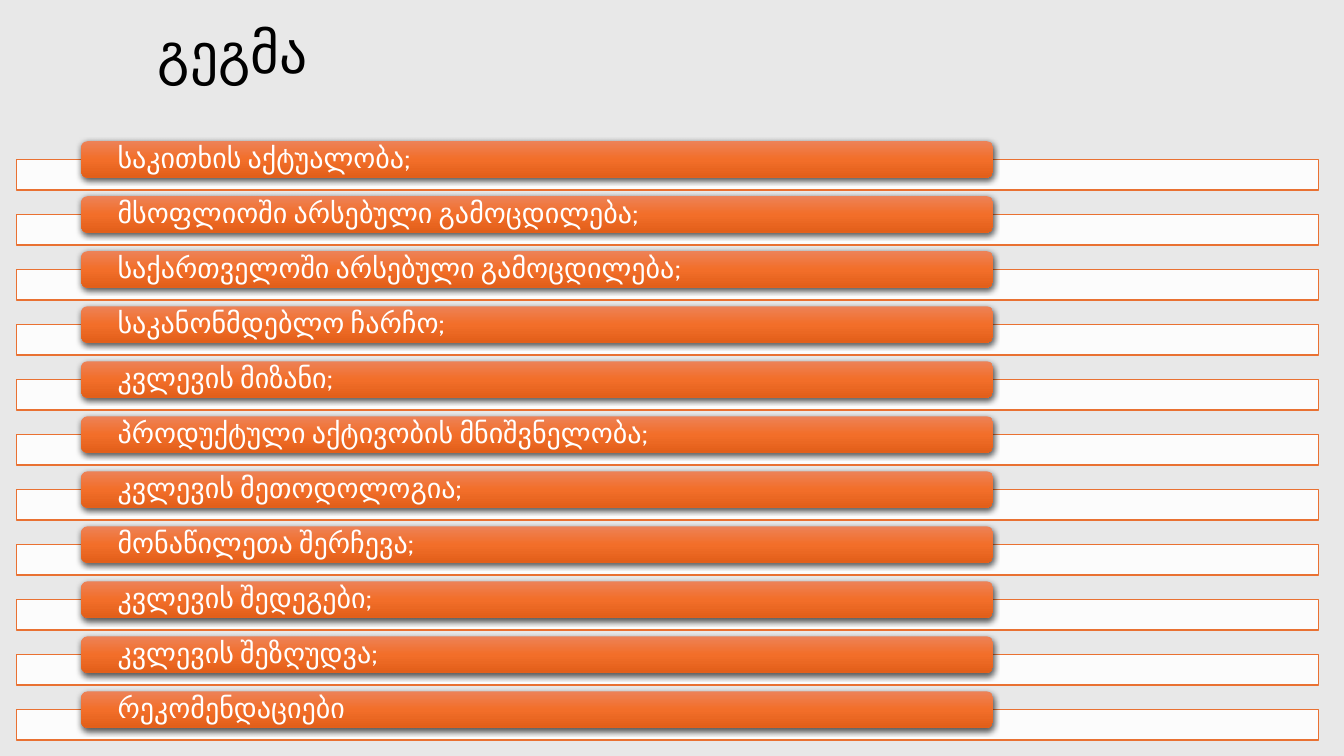
import copy

import lxml.etree
import pptx
import pptx.dml.color
import pptx.enum.shapes
import pptx.enum.text
import pptx.oxml.ns
import pptx.util

Pt = pptx.util.Pt
RGBColor = pptx.dml.color.RGBColor
SHAPES = pptx.enum.shapes.MSO_SHAPE
qn = pptx.oxml.ns.qn

BACKGROUND = RGBColor(0xE8, 0xE8, 0xE8)
BLACK = RGBColor(0, 0, 0)
WHITE = RGBColor(0xFF, 0xFF, 0xFF)
ORANGE = RGBColor(0xE9, 0x71, 0x32)
BAR_STOPS = [
    (0, RGBColor(0xED, 0x82, 0x57)),
    (0.5, RGBColor(0xF2, 0x6E, 0x29)),
    (1, RGBColor(0xE2, 0x5F, 0x1A)),
]
FONT = "Cabin"

TOPICS = [
    "საკითხის აქტუალობა;",
    "მსოფლიოში არსებული გამოცდილება;",
    "საქართველოში არსებული გამოცდილება;",
    "საკანონმდებლო ჩარჩო;",
    "კვლევის მიზანი;",
    "პროდუქტული აქტივობის მნიშვნელობა;",
    "კვლევის მეთოდოლოგია;",
    "მონაწილეთა შერჩევა;",
    "კვლევის შედეგები;",
    "კვლევის შეზღუდვა;",
    "რეკომენდაციები",
]


def write_line(shape, text, size, color, side_inset, edge_inset):
    """Put one left-aligned, vertically centred line into the shape."""
    frame = shape.text_frame
    frame.word_wrap = True
    frame.vertical_anchor = pptx.enum.text.MSO_ANCHOR.MIDDLE
    frame.margin_left = frame.margin_right = Pt(side_inset)
    frame.margin_top = frame.margin_bottom = Pt(edge_inset)
    para = frame.paragraphs[0]
    para.alignment = pptx.enum.text.PP_ALIGN.LEFT
    para.line_spacing = 0.9
    span = para.add_run()
    span.text = text
    span.font.size = Pt(size)
    span.font.name = FONT
    span.font.color.rgb = color


def add_title(page, left, top, width, height):
    box = page.shapes.add_textbox(Pt(left), Pt(top), Pt(width), Pt(height))
    write_line(box, "გეგმა", 39.6, BLACK, 7.2, 3.6)


def fill_bar(bar):
    bar.fill.gradient()
    bar.fill.gradient_angle = 270
    stop_list = bar._element.spPr.find(".//" + qn("a:gsLst"))
    stop_list.append(copy.deepcopy(stop_list[-1]))
    for stop, (position, color) in zip(bar.fill.gradient_stops, BAR_STOPS):
        stop.position = position
        stop.color.rgb = color


def drop_shadow(shape):
    shape.shadow.inherit = False
    effects = shape._element.spPr.find(qn("a:effectLst"))
    shadow = lxml.etree.SubElement(
        effects, qn("a:outerShdw"), blurRad=str(Pt(4.5)), dist=str(Pt(1.5)),
        dir="5400000", algn="ctr", rotWithShape="0")
    black = lxml.etree.SubElement(shadow, qn("a:srgbClr"), val=str(BLACK))
    lxml.etree.SubElement(black, qn("a:alpha"), val="63000")


def add_topic(page, topic, left, top, width):
    """Draw an outlined strip with the topic's bar overlapping its top edge."""
    strip = page.shapes.add_shape(
        SHAPES.RECTANGLE, Pt(left), Pt(top + 12.9), Pt(width), Pt(21.8))
    strip.shadow.inherit = False
    strip.fill.solid()
    strip.fill.fore_color.rgb = WHITE
    white = strip._element.spPr.find(qn("a:solidFill"))[0]
    lxml.etree.SubElement(white, qn("a:alpha"), val="90000")
    strip.line.color.rgb = ORANGE
    strip.line.width = Pt(1)

    bar = page.shapes.add_shape(
        SHAPES.ROUNDED_RECTANGLE, Pt(left + width * 0.05), Pt(top),
        Pt(width * 0.7), Pt(25.9))
    fill_bar(bar)
    bar.line.fill.background()
    drop_shadow(bar)
    write_line(bar, topic, 20, WHITE, 24.6, 0)


def add_agenda(page, left, top, width, pitch):
    for index, topic in enumerate(TOPICS):
        add_topic(page, topic, left, top + index * pitch, width)


def main():
    deck = pptx.Presentation()
    deck.slide_width = Pt(960)
    deck.slide_height = Pt(540)
    page = deck.slides.add_slide(deck.slide_layouts[6])
    page.background.fill.solid()
    page.background.fill.fore_color.rgb = BACKGROUND
    add_title(page, 105.8, 13, 666.7, 53.3)
    add_agenda(page, 11.6, 100.9, 930.2, 39.3)
    deck.save("out.pptx")


if __name__ == "__main__":
    main()
